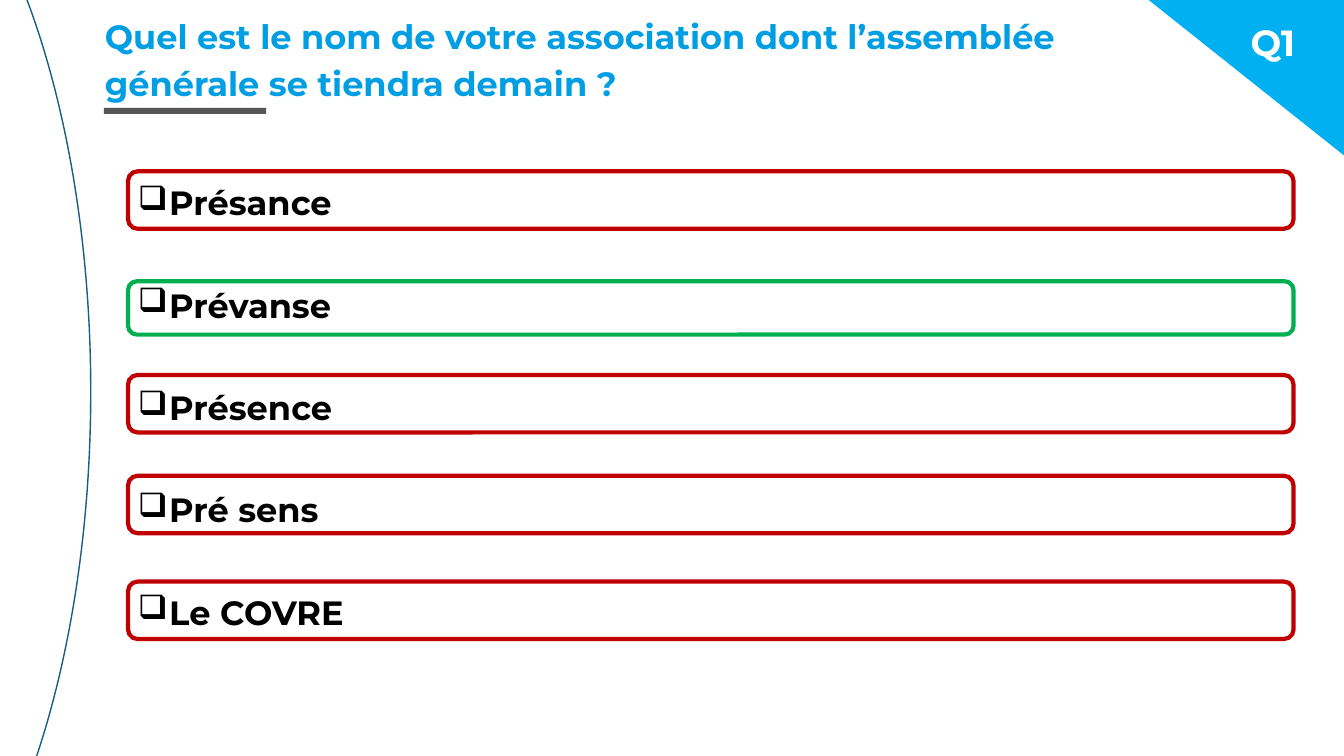
from lxml import etree
from pptx import Presentation
from pptx.dml.color import RGBColor
from pptx.enum.shapes import MSO_SHAPE as SHAPE
from pptx.enum.text import MSO_ANCHOR as ANCHOR, MSO_AUTO_SIZE as AUTOSIZE, PP_ALIGN as ALIGN
from pptx.oxml.ns import qn
from pptx.util import Inches, Pt


def add_shape(kind, box, fill=None, line=None, width=1):
    sp = s.shapes.add_shape(kind, *map(Inches, box))
    sp.shadow.inherit = False
    for fmt, color in ((sp.fill, fill), (sp.line.fill, line)):
        if color:
            fmt.solid()
            fmt.fore_color.rgb = RGBColor.from_string(color)
        else:
            fmt.background()
    if line:
        sp.line.width = Pt(width)
    return sp


def write(p, text, size, color, **spacing):
    for name, value in spacing.items():
        setattr(p, name, value)
    r = p.add_run()
    r.text = text
    for name, value in {"name": "Montserrat", "size": Pt(size), "bold": True}.items():
        setattr(r.font, name, value)
    r.font.color.rgb = RGBColor.from_string(color)


prs = Presentation()
prs.slide_width, prs.slide_height = Inches(13.33), Inches(7.5)
s = prs.slides.add_slide(prs.slide_layouts[5])

arc = add_shape(SHAPE.ARC, (-4.42, -2.12, 5.32, 12.01), line="156082")
arc.adjustments[0], arc.adjustments[1] = 178.34, 35.86
add_shape(SHAPE.RECTANGLE, (1.03, 1.07, 1.61, 0.06), "565555")

RED, GREEN = "C00000", "00B050"
answers = [
    ("Présance", 1.7, 0.57, RED),
    ("Prévanse", 2.79, 0.53, GREEN),
    ("Présence", 3.72, 0.57, RED),
    ("Pré sens", 4.72, 0.57, RED),
    ("Le COVRE", 5.77, 0.57, RED),
]
for _, top, height, color in answers:
    add_shape(SHAPE.ROUNDED_RECTANGLE, (1.27, top, 11.56, height), "FFFFFF", color, 3)

title = s.shapes.title
title.left, title.top, title.width, title.height = map(Inches, (0.94, 0.05, 11.16, 1.12))
tf = title.text_frame
for name, value in {"word_wrap": True, "auto_size": AUTOSIZE.NONE, "vertical_anchor": ANCHOR.TOP}.items():
    setattr(tf, name, value)
write(tf.paragraphs[0], "Quel est le nom de votre association dont l’assemblée générale se tiendra demain ?",
      24, "019EE3", alignment=ALIGN.LEFT, line_spacing=1.15, space_after=Pt(8))

tf = s.shapes.add_textbox(*map(Inches, (1.27, 1.76, 10.8, 5.05))).text_frame
tf.word_wrap = True
for i, (answer, *_) in enumerate(answers):
    p = tf.add_paragraph() if i else tf.paragraphs[0]
    pPr = p._p.get_or_add_pPr()
    pPr.set("marL", str(Inches(0.31)))
    pPr.set("indent", str(-Inches(0.31)))
    etree.SubElement(pPr, qn("a:buChar")).set("char", "❑")
    write(p, answer, 24, "000000", alignment=ALIGN.JUSTIFY,
          space_before=Pt(36.3 if i else 0), space_after=Pt(8))

corner = add_shape(SHAPE.RIGHT_TRIANGLE, (11.38, -0.01, 1.96, 1.56), "00B0F0")
corner.rotation = 180

tf = s.shapes.add_textbox(*map(Inches, (11.66, 0.2, 1.93, 0.57))).text_frame
tf.word_wrap = True
write(tf.paragraphs[0], "Q1", 26, "FFFFFF", alignment=ALIGN.CENTER, line_spacing=0.9)

prs.save("out.pptx")
